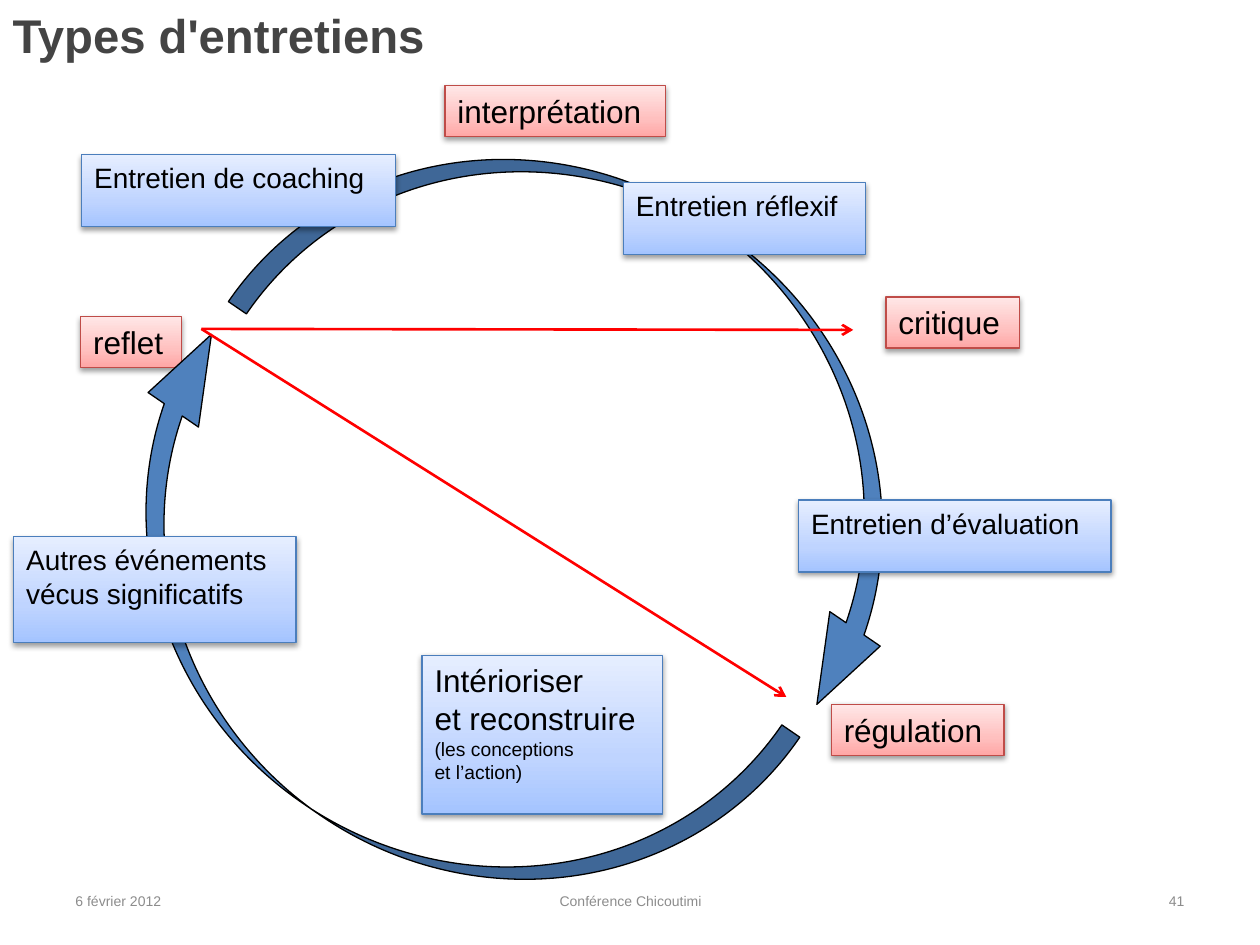
from copy import deepcopy
from dataclasses import dataclass

from lxml import etree
from pptx import Presentation
from pptx.dml.color import RGBColor
from pptx.enum.shapes import MSO_CONNECTOR, MSO_SHAPE
from pptx.enum.text import MSO_ANCHOR, MSO_AUTO_SIZE, PP_ALIGN
from pptx.oxml.ns import qn
from pptx.slide import Slide
from pptx.text.text import TextFrame
from pptx.util import Cm, Pt

RECTANGLE = MSO_SHAPE.RECTANGLE
CURVED_ARROW = MSO_SHAPE.CURVED_RIGHT_ARROW
STRAIGHT = MSO_CONNECTOR.STRAIGHT
TOP, MIDDLE = MSO_ANCHOR.TOP, MSO_ANCHOR.MIDDLE
LEFT, CENTER, RIGHT = PP_ALIGN.LEFT, PP_ALIGN.CENTER, PP_ALIGN.RIGHT
NO_AUTOFIT = MSO_AUTO_SIZE.NONE


@dataclass(frozen=True)
class BoxStyle:
    stops: tuple[tuple[float, str], ...]
    line: str


@dataclass(frozen=True)
class Theme:
    font: str = "Arial"
    text: str = "000000"
    title: str = "444444"
    footer: str = "8C8C8C"
    cycle: str = "4F81BD"
    link: str = "FF0000"
    title_size: float = 27
    stage_size: float = 18
    interview_size: float = 16
    note_size: float = 11
    footer_size: float = 8
    thin: float = 0.75
    thick: float = 1.5
    pink: BoxStyle = BoxStyle(((0, "FFA6A5"), (0.35, "FFC0BF"), (1, "FFE7E7")), "BF4C48")
    blue: BoxStyle = BoxStyle(((0, "A4C4FF"), (0.35, "BFD4FF"), (1, "E6EEFF")), "4B7EBC")


THEME = Theme()


@dataclass(frozen=True)
class Box:
    lines: tuple[tuple[str, float], ...]
    left: float
    top: float
    width: float
    height: float
    style: BoxStyle


@dataclass(frozen=True)
class Arc:
    left: float
    top: float
    rotation: float


@dataclass(frozen=True)
class Footer:
    text: str
    left: float
    width: float
    align: PP_ALIGN


def stage(text: str, left: float, top: float, width: float) -> Box:
    return Box(((text, THEME.stage_size),), left, top, width, 1.03, THEME.pink)


def interview(text: str, left: float, top: float, width: float, height: float = 1.45) -> Box:
    lines = tuple((line, THEME.interview_size) for line in text.split("\n"))
    return Box(lines, left, top, width, height, THEME.blue)


STAGES = (
    stage("reflet", 1.63, 6.38, 2.03),
    stage("interprétation", 8.97, 1.73, 4.45),
    stage("critique", 17.86, 5.99, 2.69),
    stage("régulation", 16.76, 14.2, 3.48),
)
GOAL = Box(
    (
        ("Intérioriser", THEME.stage_size),
        ("et reconstruire", THEME.stage_size),
        ("(les conceptions", THEME.note_size),
        ("et l’action)", THEME.note_size),
    ),
    8.51, 13.21, 4.85, 3.2, THEME.blue,
)
EVENTS = interview("Autres événements\nvécus significatifs", 0.28, 10.82, 5.69, 2.13)
INTERVIEWS = (
    interview("Entretien de coaching", 1.65, 3.12, 6.32),
    interview("Entretien réflexif", 12.57, 3.68, 4.88),
    interview("Entretien d’évaluation", 16.1, 10.08, 6.3),
)
UPPER_ARC = Arc(9.32, 0.03, 304.4)
LOWER_ARC = Arc(4.65, 5.92, 124.4)
LINK_START = (4.06, 6.63)
LINK_ENDS = ((17.2, 6.65), (15.85, 14.05))
FOOTERS = (
    Footer("Conférence Chicoutimi", 8.69, 8.05, CENTER),
    Footer("41", 18.21, 5.92, RIGHT),
    Footer("6 février 2012", 1.27, 5.92, LEFT),
)


def rgb(value: str) -> RGBColor:
    return RGBColor.from_string(value)


def add_text(tf: TextFrame, text: str, *, size: float, color: str = THEME.text,
             bold: bool = False, align: PP_ALIGN = LEFT, anchor: MSO_ANCHOR = TOP,
             new: bool = False) -> None:
    tf.word_wrap = True
    tf.auto_size = NO_AUTOFIT
    tf.vertical_anchor = anchor
    p = tf.add_paragraph() if new else tf.paragraphs[0]
    p.alignment = align
    r = p.add_run()
    r.text = text
    r.font.name = THEME.font
    r.font.size = Pt(size)
    r.font.bold = bold
    r.font.color.rgb = rgb(color)


def add_shadow(sp) -> None:
    sp.shadow.inherit = False
    effects = sp._element.spPr.find(qn("a:effectLst"))
    shadow = etree.SubElement(effects, qn("a:outerShdw"), blurRad="40000",
                              dist="20000", dir="5400000", rotWithShape="0")
    color = etree.SubElement(shadow, qn("a:srgbClr"), val="000000")
    etree.SubElement(color, qn("a:alpha"), val="38000")


def fill_gradient(sp, stops: tuple[tuple[float, str], ...]) -> None:
    sp.fill.gradient()
    sp.fill.gradient_angle = 90
    gs_list = next(sp._element.spPr.iter(qn("a:gsLst")))
    gs_list.append(deepcopy(gs_list[0]))
    for stop, (position, color) in zip(sp.fill.gradient_stops, stops):
        stop.position = position
        stop.color.rgb = rgb(color)


def add_box(s: Slide, box: Box) -> None:
    sp = s.shapes.add_shape(RECTANGLE, Cm(box.left), Cm(box.top), Cm(box.width), Cm(box.height))
    fill_gradient(sp, box.style.stops)
    sp.line.color.rgb = rgb(box.style.line)
    sp.line.width = Pt(THEME.thin)
    add_shadow(sp)
    for i, (text, size) in enumerate(box.lines):
        add_text(sp.text_frame, text, size=size, new=i > 0)


def add_arc(s: Slide, arc: Arc) -> None:
    sp = s.shapes.add_shape(CURVED_ARROW, Cm(arc.left), Cm(arc.top), Cm(6.76), Cm(14.99))
    for i, value in enumerate((0.065, 0.182, 0.25)):
        sp.adjustments[i] = value
    sp.rotation = arc.rotation
    sp._element.spPr.xfrm.set("flipH", "1")
    sp.shadow.inherit = False
    sp.fill.solid()
    sp.fill.fore_color.rgb = rgb(THEME.cycle)
    sp.line.color.rgb = rgb(THEME.text)
    sp.line.width = Pt(THEME.thin)


def add_link(s: Slide, start: tuple[float, float], end: tuple[float, float]) -> None:
    cxn = s.shapes.add_connector(STRAIGHT, *map(Cm, start + end))
    cxn.line.color.rgb = rgb(THEME.link)
    cxn.line.width = Pt(THEME.thick)
    etree.SubElement(cxn.line._get_or_add_ln(), qn("a:tailEnd"), type="arrow")
    etree.SubElement(cxn._element.spPr, qn("a:effectLst"))


def add_footer(s: Slide, footer: Footer) -> None:
    sp = s.shapes.add_textbox(Cm(footer.left), Cm(17.65), Cm(footer.width), Cm(1.02))
    add_text(sp.text_frame, footer.text, size=THEME.footer_size, color=THEME.footer,
             align=footer.align, anchor=MIDDLE)


def main() -> None:
    prs = Presentation()
    prs.slide_width, prs.slide_height = Cm(25.4), Cm(19.05)
    s = prs.slides.add_slide(prs.slide_layouts[5])

    title = s.shapes.title
    title.left, title.top, title.width, title.height = Cm(0), Cm(0), Cm(19.25), Cm(13.64)
    add_text(title.text_frame, "Types d'entretiens", size=THEME.title_size,
             color=THEME.title, bold=True)

    for footer in FOOTERS:
        add_footer(s, footer)
    for box in STAGES:
        add_box(s, box)
    add_arc(s, UPPER_ARC)
    add_box(s, GOAL)
    add_arc(s, LOWER_ARC)
    add_box(s, EVENTS)
    for end in LINK_ENDS:
        add_link(s, LINK_START, end)
    for box in INTERVIEWS:
        add_box(s, box)

    prs.save("out.pptx")


if __name__ == "__main__":
    main()
